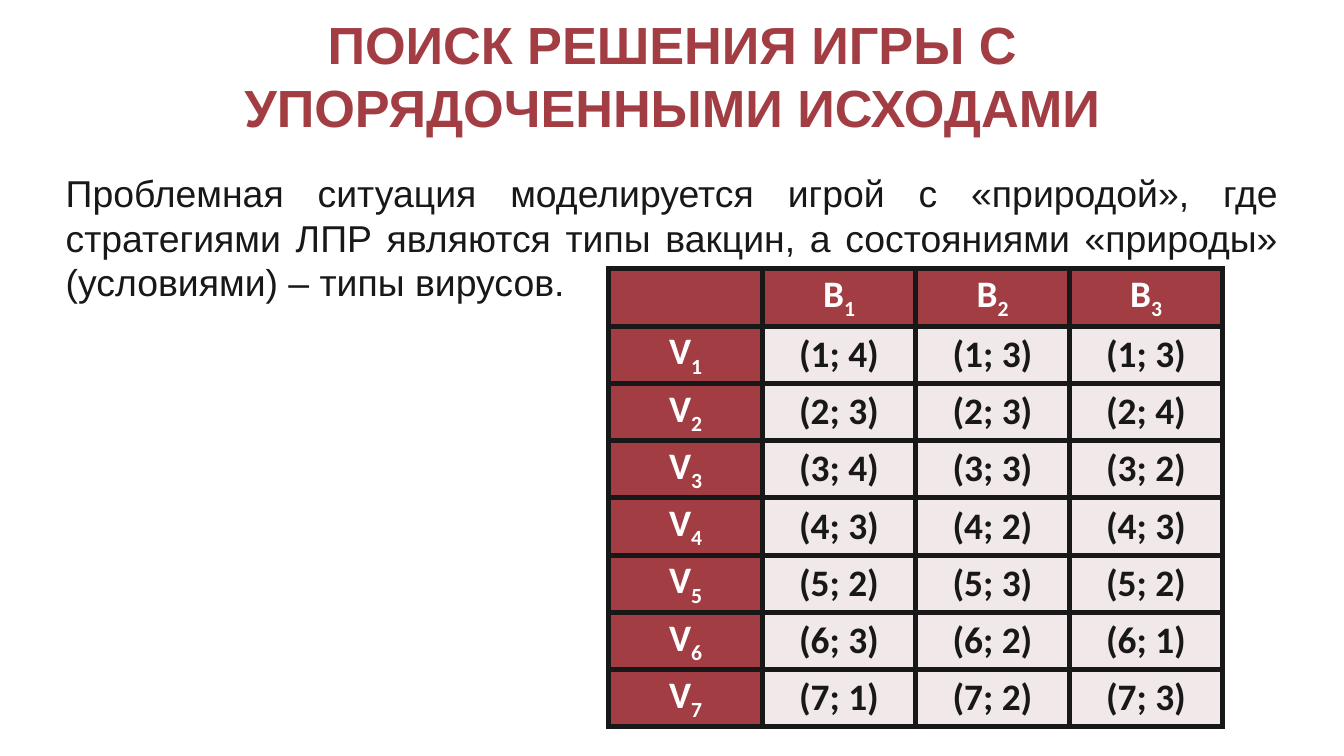
from pptx import Presentation
from pptx.dml.color import RGBColor
from pptx.enum import text
from pptx.oxml.ns import qn
from pptx.util import Inches, Pt
from lxml import etree

RED = RGBColor(0xA2, 0x3E, 0x43)
DARK = RGBColor(0x18, 0x18, 0x18)
PALE = RGBColor(0xF0, 0xE8, 0xE9)
WHITE = RGBColor(0xFF, 0xFF, 0xFF)

TITLE = "ПОИСК РЕШЕНИЯ ИГРЫ С УПОРЯДОЧЕННЫМИ ИСХОДАМИ"
BODY = ("Проблемная ситуация моделируется игрой с «природой», "
        "где стратегиями ЛПР являются типы вакцин, а состояниями "
        "«природы» (условиями) – типы вирусов.")
RANKS = [(4, 3, 3), (3, 3, 4), (4, 3, 2), (3, 2, 3), (2, 3, 2), (3, 2, 1), (1, 2, 3)]


def style_run(r, font, size, color, bold):
    r.font.name = font
    r.font.size = Pt(size)
    r.font.color.rgb = color
    r.font.bold = bold


def add_text(s, top, height, content, size, color, align, bold=False):
    sp = s.shapes.add_textbox(Inches(0.39), Inches(top), Inches(9.22), Inches(height))
    tf = sp.text_frame
    tf.word_wrap = True
    tf.vertical_anchor = text.MSO_ANCHOR.MIDDLE
    tf.text = content
    p = tf.paragraphs[0]
    p.alignment = align
    style_run(p.runs[0], "Arial", size, color, bold)


def set_borders(cell):
    tcPr = cell._tc.get_or_add_tcPr()
    for i, side in enumerate(("lnL", "lnR", "lnT", "lnB")):
        ln = etree.Element(qn(f"a:{side}"), w=str(Pt(3)))
        fill = etree.SubElement(ln, qn("a:solidFill"))
        etree.SubElement(fill, qn("a:srgbClr"), val=str(DARK))
        tcPr.insert(i, ln)


def fill_cell(cell, content, fill, color, subscript=None):
    cell.fill.solid()
    cell.fill.fore_color.rgb = fill
    set_borders(cell)
    cell.margin_left = cell.margin_right = Inches(0.07)
    cell.margin_top = cell.margin_bottom = 0
    cell.vertical_anchor = text.MSO_ANCHOR.MIDDLE
    p = cell.text_frame.paragraphs[0]
    p.alignment = text.PP_ALIGN.CENTER
    p.text = content
    if subscript:
        r = p.add_run()
        r.text = str(subscript)
        r.font._element.set("baseline", "-25000")
    for r in p.runs:
        style_run(r, "Calibri", 20, color, True)


def add_game_table(s):
    rows, cols = len(RANKS) + 1, len(RANKS[0]) + 1
    table = s.shapes.add_table(rows, cols, Inches(4.53), Inches(2),
                               Inches(4.57), Inches(3.41)).table
    fill_cell(table.cell(0, 0), "", RED, WHITE)
    for col in range(1, cols):
        fill_cell(table.cell(0, col), "B", RED, WHITE, col)
    for row, ranks in enumerate(RANKS, 1):
        fill_cell(table.cell(row, 0), "V", RED, WHITE, row)
        for col, rank in enumerate(ranks, 1):
            fill_cell(table.cell(row, col), f"({row}; {rank})", PALE, DARK)


def main():
    prs = Presentation()
    prs.slide_width = Inches(10)
    prs.slide_height = prs.slide_width * 9 // 16
    s = prs.slides.add_slide(prs.slide_layouts[6])
    add_text(s, 0.21, 0.7, TITLE, 28, RED, text.PP_ALIGN.CENTER, True)
    add_text(s, 1.21, 1.11, BODY, 20, DARK, text.PP_ALIGN.JUSTIFY)
    add_game_table(s)
    prs.save("out.pptx")


if __name__ == "__main__":
    main()
